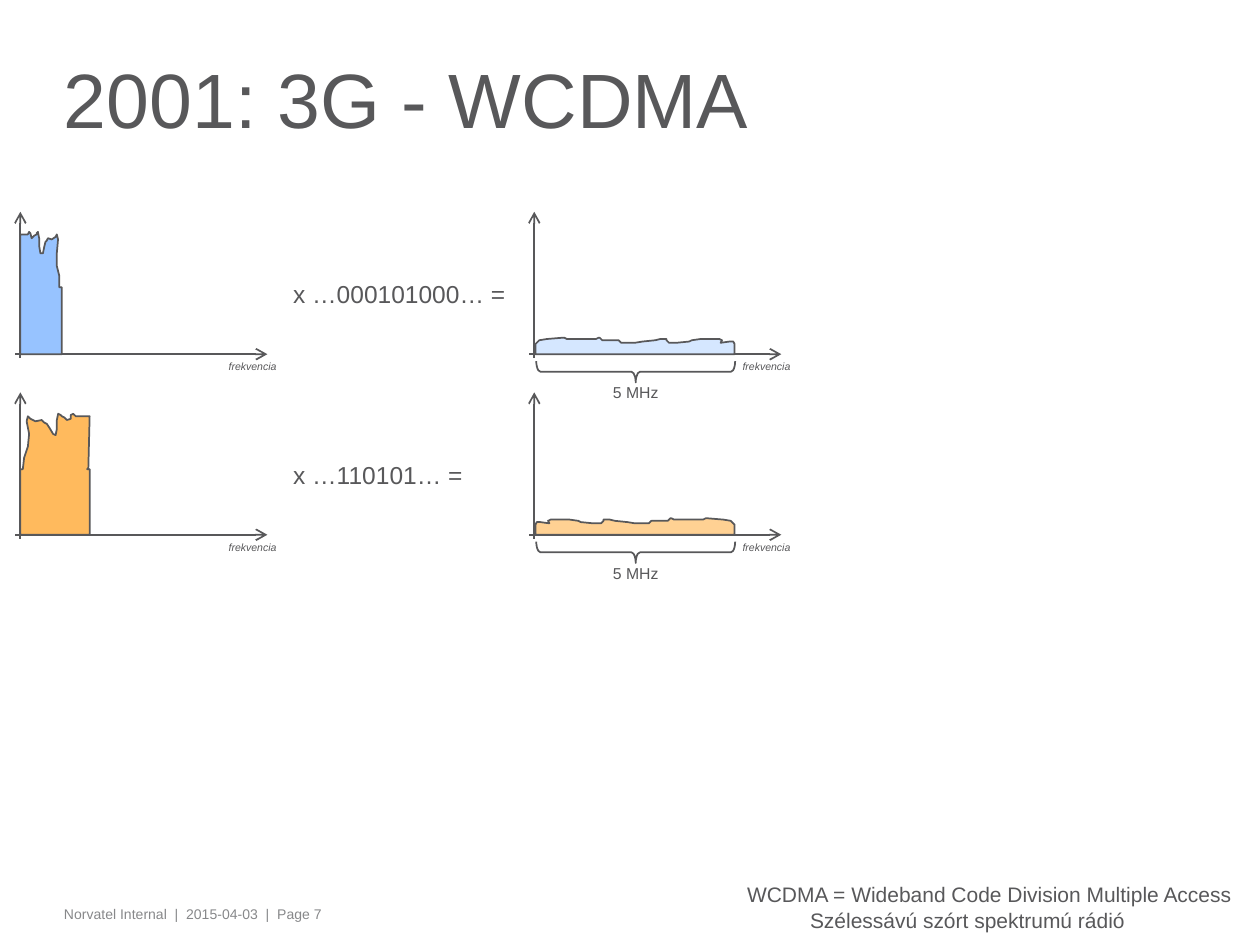
from lxml import etree
from pptx import Presentation
from pptx import util as u
from pptx.dml.color import RGBColor
from pptx.enum import shapes, text
from pptx.oxml.ns import qn

FONT = "Arial"
GREY = "58585A"
LEFT_X, RIGHT_X = 0.41, 10.77
AXIS_Y, ROW_STEP = 7.14, 3.64
OUTLINE_SCALE = u.Cm(2.54) / 100

# Outlines are (distance along axis, height above axis), in hundredths of 2.54 cm.
BLUE_BAND = [
    (14, 97), (15, 92), (15, 86), (16, 80), (18, 80), (19, 85), (20, 89), (21, 90),
    (22, 92), (25, 91), (28, 93), (29, 95), (30, 91), (29, 80), (29, 70), (31, 62),
    (31, 53), (33, 53), (33, 0), (0, 0), (0, 95), (6, 95), (7, 97), (8, 96),
    (9, 92), (11, 94), (13, 95), (13, 96),
]
ORANGE_BAND = [
    (30, 96), (29, 91), (29, 84), (28, 79), (26, 80), (23, 85), (21, 88), (19, 89),
    (17, 91), (12, 90), (8, 92), (6, 94), (5, 90), (7, 80), (6, 70), (3, 61),
    (2, 52), (0, 52), (0, 0), (55, 0), (55, 52), (53, 52), (54, 53), (55, 94),
    (44, 94), (42, 96), (40, 95), (40, 92), (37, 91), (35, 93), (33, 94), (32, 95),
]
SPREAD_BAND = [
    (22, 13), (24, 13), (26, 12), (42, 12), (49, 12), (51, 13), (52, 13), (54, 11),
    (67, 11), (69, 9), (71, 9), (80, 9), (86, 10), (96, 11), (100, 12), (103, 12),
    (105, 12), (105, 11), (107, 9), (113, 9), (123, 10), (125, 11), (132, 12),
    (147, 12), (149, 11), (148, 9), (155, 10), (158, 10), (159, 8), (159, 0),
    (1, 0), (1, 8), (2, 9), (4, 11), (10, 12),
]
MIRRORED_BAND = [(160 - x, height) for x, height in SPREAD_BAND]


def colour(value):
    return RGBColor.from_string(value)


def style_paragraph(para, size, ink=GREY, italic=False, align=text.PP_ALIGN.LEFT):
    para.alignment = align
    para.font.name = FONT
    para.font.size = u.Pt(size)
    para.font.italic = italic
    para.font.color.rgb = colour(ink)


def place(shape, left, top, width, height):
    shape.left, shape.top = u.Cm(left), u.Cm(top)
    shape.width, shape.height = u.Cm(width), u.Cm(height)


def add_title(page, words):
    title = page.shapes.title
    place(title, 1.09, 0.66, 20.83, 3.02)
    frame = title.text_frame
    frame.text = words
    frame.auto_size = text.MSO_AUTO_SIZE.NONE
    frame.vertical_anchor = text.MSO_ANCHOR.MIDDLE
    frame.margin_left = frame.margin_right = u.Cm(0.2)
    frame.margin_top = frame.margin_bottom = 0
    para = frame.paragraphs[0]
    style_paragraph(para, 44)
    para.line_spacing = 0.75


def add_label(page, words, bounds, size, wrap=False, **style):
    box = page.shapes.add_textbox(*map(u.Cm, bounds))
    frame = box.text_frame
    frame.text = words
    frame.word_wrap = wrap
    for para in frame.paragraphs:
        style_paragraph(para, size, **style)
    return frame


def paint(shape, fill):
    shape.shadow.inherit = False
    shape.fill.solid()
    shape.fill.fore_color.rgb = colour(fill)
    shape.line.color.rgb = colour(GREY)
    shape.line.width = u.Pt(1)


def add_arrow(page, *ends):
    arrow = page.shapes.add_connector(shapes.MSO_CONNECTOR.STRAIGHT, *map(u.Cm, ends))
    arrow.line.color.rgb = colour(GREY)
    arrow.line.width = u.Pt(1)
    etree.SubElement(arrow.line._get_or_add_ln(), qn("a:tailEnd"), type="arrow")
    etree.SubElement(arrow._element.spPr, qn("a:effectLst"))


def add_band(page, x, y, outline, fill):
    points = [(along, -height) for along, height in outline]
    builder = page.shapes.build_freeform(*points[0], scale=OUTLINE_SCALE)
    builder.add_line_segments(points[1:], close=True)
    paint(builder.convert_to_shape(u.Cm(x), u.Cm(y)), fill)


def add_spectrum(page, x, y, outline, fill):
    """Draw frequency axes with their origin at x, y and a band on them."""
    add_arrow(page, x, y + 0.08, x, y - 2.87)
    add_arrow(page, x - 0.1, y, x + 4.98, y)
    add_label(page, "frekvencia", (x + 3.95, y, 1.5, 0.5), 6, italic=True)
    add_band(page, x, y, outline, fill)


def add_bandwidth(page, x, y):
    brace = page.shapes.add_shape(
        shapes.MSO_SHAPE.RIGHT_BRACE,
        u.Cm(x + 1.83), u.Cm(y - 1.65), u.Cm(0.43), u.Cm(4.01))
    brace.rotation = 90
    brace.adjustments[0] = 0.2
    paint(brace, "FFFFFF")
    add_label(page, "5 MHz", (x + 1.32, y + 0.46, 1.45, 0.64), 9,
              align=text.PP_ALIGN.CENTER)


def add_footer(page):
    frame = add_label(page, "Norvatel Internal  |  2015-04-03  |  Page 7",
                      (1.09, 18.14, 20.55, 0.61), 8, wrap=True, ink="87888A")
    frame.margin_left = frame.margin_right = u.Cm(0.2)


def main():
    deck = Presentation()
    deck.slide_width, deck.slide_height = u.Cm(25.4), u.Cm(19.05)
    page = deck.slides.add_slide(deck.slide_layouts[5])
    add_title(page, "2001: 3G - WCDMA")
    add_footer(page)

    meaning = add_label(
        page,
        "WCDMA = Wideband Code Division Multiple Access\n\tSzélessávú szórt spektrumú rádió",
        (14.81, 17.65, 10.46, 1.27), 12)
    meaning.vertical_anchor = text.MSO_ANCHOR.BOTTOM

    rows = [
        (BLUE_BAND, "97C3FF", "x …000101000… =", 4.8, SPREAD_BAND, "D5E7FF"),
        (ORANGE_BAND, "FFBA5D", "x …110101… =", 3.94, MIRRORED_BAND, "FFD193"),
    ]
    for index, (band, fill, code, width, spread, pale) in enumerate(rows):
        y = AXIS_Y + index * ROW_STEP
        add_bandwidth(page, RIGHT_X, y)
        add_spectrum(page, LEFT_X, y, band, fill)
        add_label(page, code, (5.66, y - 1.63, width, 0.86), 14)
        add_spectrum(page, RIGHT_X, y, spread, pale)

    deck.save("out.pptx")


if __name__ == "__main__":
    main()
